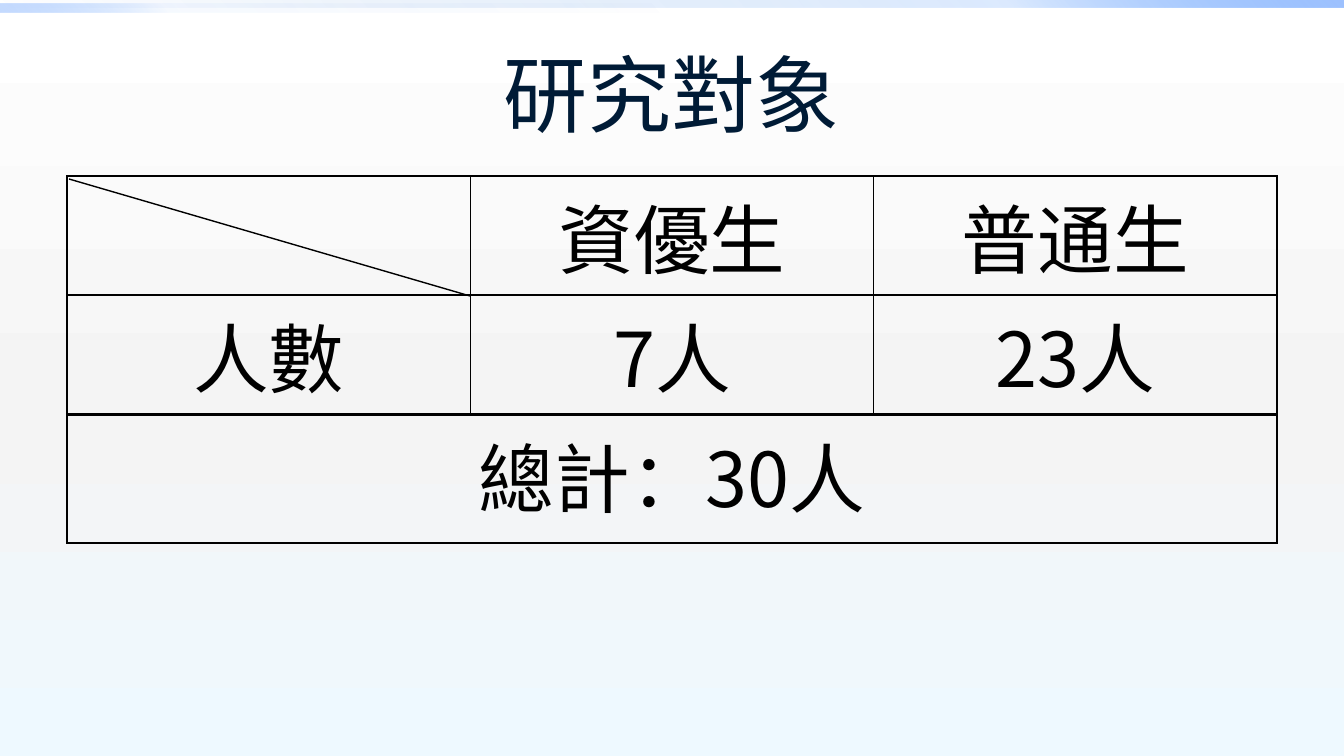
from lxml.etree import SubElement
from pptx import Presentation
from pptx.dml.color import RGBColor
from pptx.enum.shapes import MSO_CONNECTOR, MSO_SHAPE
from pptx.enum.text import MSO_ANCHOR, PP_ALIGN
from pptx.oxml.ns import qn
from pptx.util import Pt

FONT = "Noto Sans CJK SC"
BLACK = "000000"
TITLE = "研究對象"
COUNTS = [["", "資優生", "普通生"], ["人數", "7人", "23人"]]
TOTAL = [["總計：30人"]]
# Gradient stops: place, colour, opacity (all in percent)
SKY = [(0, "FFFFFF", 100), (55, "F4F4F4", 100), (100, "EEF9FF", 100)]
BARS = [
    ((0, 0, 1344, 8), 315, [(0, "0058B7", 0), (75, "4F95FF", 20), (100, "9EC2FF", 100)]),
    ((0, 4, 672, 8), 135, [(0, "0058B7", 0), (75, "4F95FF", 5), (100, "9EC2FF", 60)]),
]
LEFT, TOP, WIDTH, ROW, LAST = 67, 176, 1210, 119, 128
SCALE = 12192000 / 1344


def px(*sizes):
    return [round(size * SCALE) for size in sizes]


def color(text):
    return RGBColor.from_string(text)


def grade(fill, root, stops, angle):
    """Fill with a linear gradient, its angle clockwise in degrees."""
    fill.gradient()
    grad = root.find(".//" + qn("a:gradFill"))
    for child in list(grad):
        grad.remove(child)
    group = SubElement(grad, qn("a:gsLst"))
    for place, shade, solid in stops:
        stop = SubElement(group, qn("a:gs"), pos=str(place * 1000))
        tint = SubElement(stop, qn("a:srgbClr"), val=shade)
        SubElement(tint, qn("a:alpha"), val=str(solid * 1000))
    SubElement(grad, qn("a:lin"), ang=str(angle * 60000), scaled="0")


def write(frame, text, size=54, shade=BLACK):
    para = frame.paragraphs[0]
    para.alignment = PP_ALIGN.CENTER
    run = para.add_run()
    run.text = text
    run.font.size = Pt(size)
    run.font.name = FONT
    run.font.color.rgb = color(shade)
    SubElement(run.font._element, qn("a:ea"), typeface=FONT)


def border(cell):
    props = cell._tc.get_or_add_tcPr()
    for side in "LRTB":
        line = SubElement(props, qn("a:ln" + side), w=str(Pt(1)))
        paint = SubElement(line, qn("a:solidFill"))
        SubElement(paint, qn("a:srgbClr"), val=BLACK)


def grid(slide, rows, top, high):
    box = px(LEFT, top, WIDTH, high * len(rows))
    table = slide.shapes.add_table(len(rows), len(rows[0]), *box).table
    table.first_row = table.horz_banding = False
    for r, row in enumerate(rows):
        for c, text in enumerate(row):
            cell = table.cell(r, c)
            border(cell)
            cell.fill.background()
            if text:
                write(cell.text_frame, text)


def main():
    deck = Presentation()
    deck.slide_width, deck.slide_height = px(1344, 756)
    slide = deck.slides.add_slide(deck.slide_layouts[6])
    grade(slide.background.fill, slide.element, SKY, 90)

    for box, angle, stops in BARS:
        bar = slide.shapes.add_shape(MSO_SHAPE.RECTANGLE, *px(*box))
        bar.shadow.inherit = False
        bar.line.fill.background()
        grade(bar.fill, bar.element, stops, angle)

    title = slide.shapes.add_textbox(*px(LEFT, 30, WIDTH, 126)).text_frame
    title.word_wrap = True
    title.vertical_anchor = MSO_ANCHOR.MIDDLE
    write(title, TITLE, size=60, shade="001B36")

    grid(slide, COUNTS, TOP, ROW)
    slash = slide.shapes.add_connector(MSO_CONNECTOR.STRAIGHT, *px(69, 179, 470, 296))
    slash.line.color.rgb = color(BLACK)
    slash.line.width = Pt(1)
    SubElement(slash.element.spPr, qn("a:effectLst"))
    grid(slide, TOTAL, TOP + ROW * len(COUNTS) + 1, LAST)
    deck.save("out.pptx")


if __name__ == "__main__":
    main()
